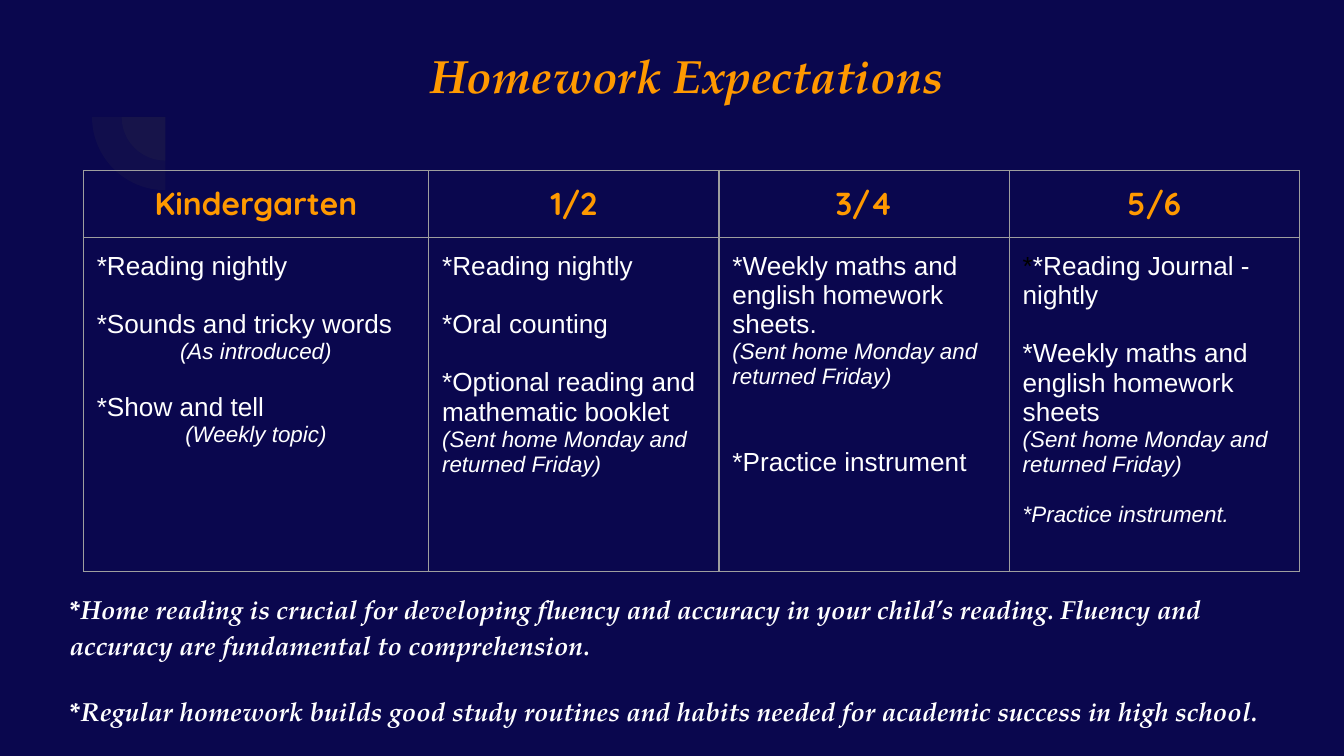
from dataclasses import dataclass

from lxml import etree
from pptx import Presentation
from pptx.dml.color import RGBColor
from pptx.enum.shapes import MSO_SHAPE
from pptx.enum.text import PP_ALIGN
from pptx.oxml.ns import qn
from pptx.util import Inches, Pt

PIE = MSO_SHAPE.PIE
LEFT, CENTER = PP_ALIGN.LEFT, PP_ALIGN.CENTER


@dataclass(frozen=True)
class Theme:
    background: str = "0A074E"
    accent: str = "FF9900"
    body: str = "FFFFFF"
    dark: str = "000000"
    border: str = "9E9E9E"
    ornament: str = "424242"
    script_font: str = "TeX Gyre Pagella"
    header_font: str = "Quicksand"
    body_font: str = "Arial"
    title_size: int = 25
    header_size: int = 17
    task_size: int = 14
    detail_size: int = 12
    border_width: float = 0.75
    ornament_alpha: int = 13


THEME = Theme()
INSET = Inches(0.1)
BLANK_TASK, BLANK_DETAIL = 15.5, 13.5  # height of one empty line, in points
SENT_HOME = "(Sent home Monday and returned Friday)"


@dataclass(frozen=True)
class Line:
    text: str
    gap: float = 0
    detail: bool = False
    align: PP_ALIGN = LEFT


GRADES = {
    "Kindergarten": [
        Line("*Reading nightly"),
        Line("*Sounds and tricky words", BLANK_TASK),
        Line("(As introduced)", detail=True, align=CENTER),
        Line("*Show and tell", BLANK_TASK),
        Line("(Weekly topic)", detail=True, align=CENTER),
    ],
    "1/2": [
        Line("*Reading nightly"),
        Line("*Oral counting", BLANK_TASK),
        Line("*Optional reading and mathematic booklet", BLANK_TASK),
        Line(SENT_HOME, detail=True),
    ],
    "3/4": [
        Line("*Weekly maths and english homework sheets."),
        Line(SENT_HOME, detail=True),
        Line("*Practice instrument", 2 * BLANK_TASK),
    ],
    "5/6": [
        Line("*Reading Journal - nightly"),
        Line("*Weekly maths and english homework sheets", BLANK_TASK),
        Line(SENT_HOME, detail=True),
        Line("*Practice instrument.", BLANK_DETAIL, detail=True),
    ],
}
NOTES = [
    "*Home reading is crucial for developing fluency and accuracy in your child’s reading. "
    "Fluency and accuracy are fundamental to comprehension.",
    "*Regular homework builds good study routines and habits needed for academic success "
    "in high school.",
]


def rgb(color):
    return RGBColor.from_string(color)


def style_run(run, font, size, color, bold=False, italic=False):
    run.font.name = font
    run.font.size = Pt(size)
    run.font.color.rgb = rgb(color)
    run.font.bold = bold
    run.font.italic = italic


def set_insets(owner):
    owner.margin_left = owner.margin_right = INSET
    owner.margin_top = owner.margin_bottom = INSET


def add_ornament(slide, center_x, center_y, diameter):
    """Draw a faint quarter disc that fills the lower left of its circle."""
    quarter = slide.shapes.add_shape(
        PIE, Inches(center_x - diameter / 2), Inches(center_y - diameter / 2),
        Inches(diameter), Inches(diameter))
    quarter.adjustments[0], quarter.adjustments[1] = 108, 162
    quarter.rotation = 270
    quarter.shadow.inherit = False
    quarter.line.fill.background()
    quarter.fill.solid()
    quarter.fill.fore_color.rgb = rgb(THEME.ornament)
    color = quarter.fill._xPr.find(qn("a:solidFill"))[0]
    etree.SubElement(color, qn("a:alpha"), val=str(THEME.ornament_alpha * 1000))


def add_script_text(slide, top, height, texts, size, color, align=LEFT):
    box = slide.shapes.add_textbox(Inches(0.42), Inches(top), Inches(9.38), Inches(height))
    frame = box.text_frame
    frame.word_wrap = True
    set_insets(frame)
    frame.text = "\n".join(texts)
    for index, paragraph in enumerate(frame.paragraphs):
        paragraph.alignment = align
        paragraph.line_spacing = 1.15
        paragraph.space_before = Pt(16 if index else 0)
        style_run(paragraph.runs[0], THEME.script_font, size, color, bold=True, italic=True)


def set_borders(cell):
    properties = cell._tc.get_or_add_tcPr()
    for position, side in enumerate(("a:lnL", "a:lnR", "a:lnT", "a:lnB")):
        line = etree.Element(qn(side), w=str(Pt(THEME.border_width)))
        fill = etree.SubElement(line, qn("a:solidFill"))
        etree.SubElement(fill, qn("a:srgbClr"), val=THEME.border)
        properties.insert(position, line)


def fill_header(cell, grade):
    cell.text = grade
    paragraph = cell.text_frame.paragraphs[0]
    paragraph.alignment = CENTER
    style_run(paragraph.runs[0], THEME.header_font, THEME.header_size, THEME.accent, bold=True)


def fill_tasks(cell, lines):
    cell.text = "\n".join(line.text for line in lines)
    for paragraph, line in zip(cell.text_frame.paragraphs, lines):
        paragraph.alignment = line.align
        paragraph.space_before = Pt(line.gap)
        size = THEME.detail_size if line.detail else THEME.task_size
        style_run(paragraph.runs[0], THEME.body_font, size, THEME.body, italic=line.detail)


def add_dark_asterisk(cell):
    """Put a near-invisible asterisk before the first task of the cell."""
    paragraph = cell.text_frame.paragraphs[0]
    task = paragraph.runs[0]
    asterisk = paragraph.add_run()
    asterisk.text = "*"
    style_run(asterisk, THEME.body_font, THEME.task_size, THEME.dark)
    task._r.addprevious(asterisk._r)


def add_homework_table(slide):
    widths, heights = (2.57, 2.16, 2.16, 2.16), (0.5, 2.48)
    table = slide.shapes.add_table(
        len(heights), len(widths), Inches(0.62), Inches(1.27),
        Inches(sum(widths)), Inches(sum(heights))).table
    table.first_row = table.horz_banding = False
    for column, width in zip(table.columns, widths):
        column.width = Inches(width)
    for row, height in zip(table.rows, heights):
        row.height = Inches(height)
    for index, (grade, lines) in enumerate(GRADES.items()):
        fill_header(table.cell(0, index), grade)
        fill_tasks(table.cell(1, index), lines)
    add_dark_asterisk(table.cell(1, len(widths) - 1))
    for cell in table.iter_cells():
        set_insets(cell)
        cell.fill.background()
        set_borders(cell)


def main():
    deck = Presentation()
    deck.slide_width = Inches(10)
    deck.slide_height = deck.slide_width * 9 // 16
    slide = deck.slides.add_slide(deck.slide_layouts[6])
    slide.background.fill.solid()
    slide.background.fill.fore_color.rgb = rgb(THEME.background)
    for diameter in (0.65, 1.09):
        add_ornament(slide, 1.23, 0.87, diameter)
    add_script_text(slide, 0.19, 0.7, ["Homework Expectations"],
                    THEME.title_size, THEME.accent, CENTER)
    add_script_text(slide, 4.28, 1.25, NOTES, THEME.task_size, THEME.body)
    add_homework_table(slide)
    deck.save("out.pptx")


if __name__ == "__main__":
    main()
